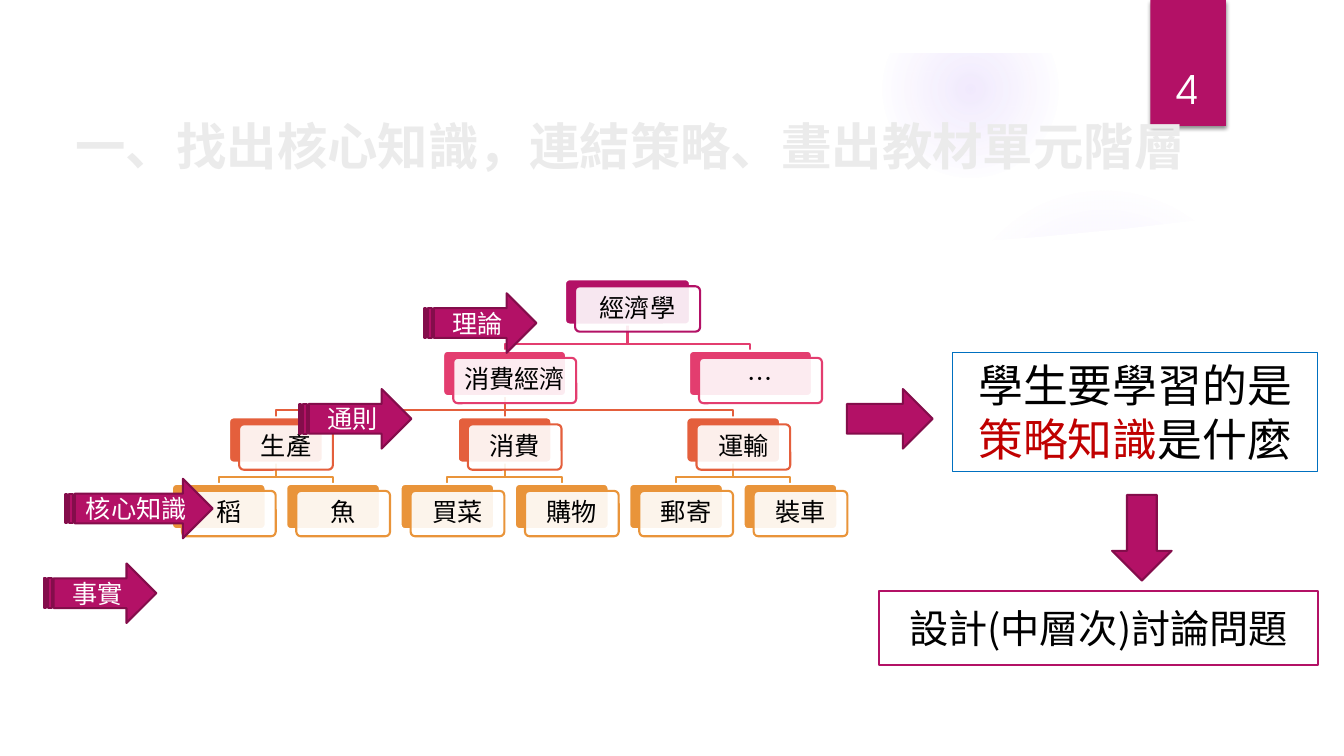
from lxml import etree
from pptx import Presentation
from pptx.dml.color import RGBColor
from pptx.enum.shapes import MSO_CONNECTOR, MSO_SHAPE
from pptx.enum.text import MSO_ANCHOR, PP_ALIGN
from pptx.oxml import parse_xml
from pptx.oxml.ns import qn
from pptx.util import Inches, Pt

RECT, ROUND = MSO_SHAPE.RECTANGLE, MSO_SHAPE.ROUNDED_RECTANGLE
OVAL, FRAME = MSO_SHAPE.OVAL, MSO_SHAPE.FRAME
ARROW, STRIPE = MSO_SHAPE.RIGHT_ARROW, MSO_SHAPE.STRIPED_RIGHT_ARROW
LINE = MSO_CONNECTOR.STRAIGHT
TOP, MID, LOW = MSO_ANCHOR.TOP, MSO_ANCHOR.MIDDLE, MSO_ANCHOR.BOTTOM
LEFT, MIDST = PP_ALIGN.LEFT, PP_ALIGN.CENTER

SANS, LATIN = "Noto Sans CJK SC", "TeX Gyre Adventor"
INK = {
    "white": "FFFFFF", "black": "000000", "pale": "EBEBEB", "plum": "B31166",
    "dark": "840D4B", "pink": "E33D6F", "coral": "E45F3C", "amber": "E9943A",
    "blue": "0070C0", "red": "C00000", "glow": "9B6BF2",
}
NS = 'xmlns:a="http://schemas.openxmlformats.org/drawingml/2006/main"'
LEVELS = [(2.77, 1.24, "plum"), (3.48, 1.22, "pink"),
          (4.14, 0.93, "coral"), (4.8, 0.93, "amber")]
TOPICS = ("經濟學", [
    ("消費經濟", [
        ("生產", [("稻", 0), ("魚", 1)]),
        ("消費", [("買菜", 2), ("購物", 3)]),
        ("運輸", [("郵寄", 4), ("裝車", 5)])]),
    ("…", 4.65)])
STEPS = [("理論", 4.21, 2.91, 1.11), ("核心知識", 0.65, 4.75, 1.46),
         ("通則", 2.97, 3.86, 1.11), ("事實", 0.44, 5.59, 1.11)]


def tint(name):
    return RGBColor.from_string(INK[name])


def paint(shape, fill=None, line=None, width=1.5, alpha=None):
    shape.shadow.inherit = False
    if fill:
        shape.fill.solid()
        shape.fill.fore_color.rgb = tint(fill)
        if alpha:
            clr = shape._element.spPr.find(".//" + qn("a:srgbClr"))
            etree.SubElement(clr, qn("a:alpha")).set("val", str(alpha * 1000))
    else:
        shape.fill.background()
    if line:
        shape.line.color.rgb = tint(line)
        shape.line.width = Pt(width)
    else:
        shape.line.fill.background()


def block(slide, kind, box, **look):
    shape = slide.shapes.add_shape(kind, *map(Inches, box))
    paint(shape, **look)
    return shape


def write(shape, text, size=18, color="black", font=SANS, bold=False,
          align=MIDST, anchor=MID, pad=None, space=None):
    frame = shape.text_frame
    frame.word_wrap = True
    frame.vertical_anchor = anchor
    if pad is not None:
        frame.margin_left = frame.margin_right = Inches(pad)
        frame.margin_top = frame.margin_bottom = Inches(pad)
    para = frame.paragraphs[0]
    para.alignment = align
    if space:
        para.line_spacing = space
    parts = [(text, color)] if isinstance(text, str) else text
    for part, hue in parts:
        if part == "\n":
            para.add_line_break()
            continue
        run = para.add_run()
        run.text = part
        run.font.size = Pt(size)
        run.font.bold = bold
        run.font.name = font
        run.font.color.rgb = tint(hue)
        etree.SubElement(run._r.get_or_add_rPr(), qn("a:ea")).set("typeface", font)


def glow(slide, box, stops):
    oval = block(slide, OVAL, box, fill="glow")
    marks = "".join(
        f'<a:gs pos="{pos * 1000}"><a:srgbClr val="{INK["glow"]}">'
        f'<a:alpha val="{alpha * 1000}"/></a:srgbClr></a:gs>'
        for pos, alpha in stops)
    fill = parse_xml(
        f'<a:gradFill {NS} rotWithShape="1"><a:gsLst>{marks}</a:gsLst>'
        '<a:path path="circle"><a:fillToRect l="50000" t="50000" r="50000" '
        'b="50000"/></a:path></a:gradFill>')
    props = oval._element.spPr
    props.replace(props.find(qn("a:solidFill")), fill)


def trace(slide, points, close):
    start, *rest = [(Inches(x), Inches(y)) for x, y in points]
    pen = slide.shapes.build_freeform(*start)
    pen.add_line_segments(rest, close=close)
    return pen.convert_to_shape()


def scene(slide, wide, high):
    glow(slide, (9.41, 1.83, 3.08, 3.08), [(0, 7), (36, 6), (69, 0), (100, 0)])
    glow(slide, (8.75, 0.01, 1.75, 1.75), [(0, 14), (36, 7), (73, 0), (100, 0)])
    edge = [(0.5, 2.04), (1.59, 2.18), (2.83, 2.3), (4.44, 2.41), (5.83, 2.46),
            (7.08, 2.48), (8.4, 2.46), (9.49, 2.41), (10.32, 2.35),
            (11.16, 2.27), (12, 2.17), (12.84, 2.04), (12.84, 7), (0.5, 7)]
    paint(trace(slide, edge, True), fill="white")
    rim = block(slide, FRAME, (0, 0, wide, high), fill="white")
    rim.adjustments[0] = 0.07


def badge(slide, x, y, w, h):
    flag = block(slide, RECT, (x, y, w, h), fill="plum")
    cast = parse_xml(
        f'<a:outerShdw {NS} blurRad="38100" dist="25400" dir="5400000">'
        '<a:srgbClr val="000000"><a:alpha val="45000"/></a:srgbClr></a:outerShdw>')
    flag._element.spPr.find(qn("a:effectLst")).append(cast)


def label(slide, box, text, **style):
    write(slide.shapes.add_textbox(*map(Inches, box)), text, **style)


def link(slide, top, end, hue, layer):
    (above, x), (below, kid) = top, end
    if abs(x - kid) < 0.02:
        wire = slide.shapes.add_connector(LINE, 0, 0, 0, 0)
        wire.begin_connect(above, 2)
        wire.end_connect(below, 0)
        wire.line.color.rgb = tint(hue)
        wire.line.width = Pt(1.5)
        etree.SubElement(wire._element.spPr, qn("a:effectLst"))
    else:
        start = (above.top + above.height) / Inches(1)
        stop = below.top / Inches(1)
        bend = stop - 0.07
        wire = trace(slide, [(x, start), (x, bend), (kid, bend), (kid, stop)], False)
        paint(wire, line=hue)
    slide.shapes._spTree.insert(layer, wire._element)


def topic(slide, node, depth, layer):
    name, kids = node
    y, w, hue = LEVELS[depth]
    if isinstance(kids, list):
        ends = [topic(slide, kid, depth + 1, layer) for kid in kids]
        x = (ends[0][1] + ends[-1][1]) / 2
    else:
        ends = []
        x = 2.17 + 1.134 * kids
    left = x - w / 2
    back = block(slide, ROUND, (left, y, w, 0.45), fill=hue, line="white")
    front = block(slide, ROUND, (left + 0.1, y + 0.07, w, 0.45),
                  fill="white", line=hue, alpha=90)
    for card in (back, front):
        card.adjustments[0] = 0.1
    write(front, name, pad=0.07, space=0.9)
    for end in ends:
        link(slide, (back, x), end, LEVELS[depth + 1][2], layer)
    return back, x


def steps(slide):
    for name, x, y, w in STEPS:
        arrow = block(slide, STRIPE, (x, y, w, 0.59), fill="plum", line="dark")
        write(arrow, name, color="white")


def goals(slide, x, y, w):
    aim = block(slide, RECT, (x + 0.73, y, w - 0.73, 1.18), line="blue", width=0.75)
    write(aim, [("學生要學習的是", "black"), ("\n", None),
                ("策略知識", "red"), ("是什麼", "black")], size=32, anchor=TOP)
    task = block(slide, RECT, (x, y + 2.36, w, 0.74), fill="white", line="plum")
    write(task, "設計(中層次)討論問題", size=28)
    for dx, dy, turn in [(-0.32, 0.36, 0), (2.18, 1.54, 90)]:
        arrow = block(slide, ARROW, (x + dx, y + dy, 0.85, 0.59),
                      fill="plum", line="dark")
        arrow.rotation = turn


def main():
    deck = Presentation()
    deck.slide_width, deck.slide_height = Inches(13.33), Inches(7.5)
    slide = deck.slides.add_slide(deck.slide_layouts[6])
    scene(slide, 13.33, 7.5)
    badge(slide, 11.41, 0, 0.75, 1.25)
    label(slide, (0.65, 0.89, 12.42, 1.1), "一、找出核心知識，連結策略、畫出教材單元階層",
          size=36, color="pale", bold=True, align=LEFT)
    label(slide, (11.32, 0.32, 0.92, 0.84), "4", size=28, color="white",
          font=LATIN, anchor=LOW)
    topic(slide, TOPICS, 0, len(slide.shapes._spTree))
    steps(slide)
    goals(slide, 8.72, 3.5, 4.35)
    deck.save("out.pptx")


if __name__ == "__main__":
    main()
